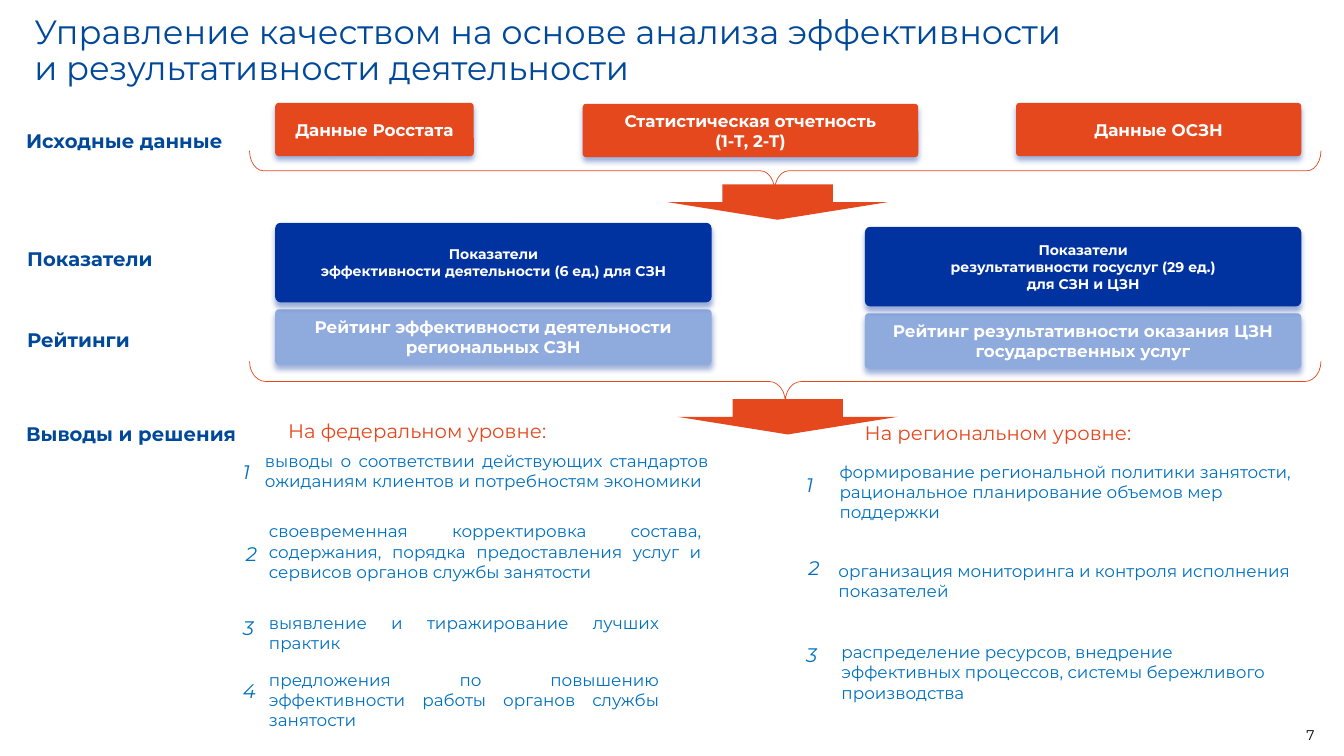
import pptx
import pptx.util
import pptx.dml.color
import pptx.enum.shapes
import pptx.enum.text
import pptx.oxml
import pptx.oxml.ns

COLOURS = {
    "title": "004899",
    "source": "E5481D",
    "indicator": "0033A0",
    "rating": "8FAADC",
    "conclusion": "0070C0",
    "white": "FFFFFF",
    "black": "000000",
}
FONT = "Montserrat"
COLUMNS, ROWS = 160, 90
SHAPES = pptx.enum.shapes.MSO_SHAPE
ALIGN = pptx.enum.text.PP_ALIGN
ANCHOR = pptx.enum.text.MSO_ANCHOR
LABEL_HEIGHT = 4.08


class QualitySlide:
    """Draws one slide on a grid of columns and rows in a single style."""

    def __init__(self, deck):
        self.deck = deck
        self.page = deck.slides.add_slide(deck.slide_layouts[5])

    def frame(self, left, top, width, height):
        column = self.deck.slide_width / COLUMNS
        row = self.deck.slide_height / ROWS
        return [round(value) for value in (left * column, top * row, width * column, height * row)]

    def colour(self, name):
        return pptx.dml.color.RGBColor.from_string(COLOURS[name])

    def fill_text(self, text_frame, text, size, colour, align=ALIGN.LEFT, bold=False, italic=False):
        text_frame.text = text
        for para in text_frame.paragraphs:
            para.alignment = align
            for span in para.runs:
                span.font.name = FONT
                span.font.size = pptx.util.Pt(size)
                span.font.bold = bold
                span.font.italic = italic
                span.font.color.rgb = self.colour(colour)

    def title(self, text, *place):
        box = self.page.shapes.title
        box.left, box.top, box.width, box.height = self.frame(*place)
        text_frame = box.text_frame
        text_frame.margin_left = text_frame.margin_right = 0
        text_frame.margin_top = text_frame.margin_bottom = 0
        text_frame.vertical_anchor = ANCHOR.MIDDLE
        text_frame.auto_size = pptx.enum.text.MSO_AUTO_SIZE.NONE
        self.fill_text(text_frame, text, 24, "title")
        text_frame.paragraphs[0].line_spacing = 0.9

    def text(self, text, place, size, colour, wrap=True, **style):
        box = self.page.shapes.add_textbox(*self.frame(*place))
        box.text_frame.word_wrap = wrap
        self.fill_text(box.text_frame, text, size, colour, **style)
        return box

    def label(self, text, left, top, width):
        self.text(text, (left, top, width, LABEL_HEIGHT), 14, "title", wrap=False, bold=True)

    def heading(self, text, left, top):
        self.text(text, (left, top, 46.56, LABEL_HEIGHT), 14, "source")

    def point(self, number, number_place, text, left, top, width, lines, align):
        self.text(str(number), (*number_place, 3.72, LABEL_HEIGHT), 14, "conclusion",
                  wrap=False, italic=True)
        self.text(text, (left, top, width, 0.96 + 2.52 * lines), 12, "conclusion", align=align)

    def page_number(self, text, *place):
        box = self.text(text, place, 10, "black", align=ALIGN.RIGHT)
        box.text_frame.vertical_anchor = ANCHOR.MIDDLE

    def shape(self, kind, place, fill):
        shape = self.page.shapes.add_shape(kind, *self.frame(*place))
        shape.shadow.inherit = False
        shape.fill.solid()
        shape.fill.fore_color.rgb = self.colour(fill)
        shape.line.fill.background()
        return shape

    def card(self, text, place, fill, size=12):
        card = self.shape(SHAPES.ROUNDED_RECTANGLE, place, fill)
        card.adjustments[0] = 0.07
        card.text_frame.word_wrap = True
        card.text_frame.vertical_anchor = ANCHOR.MIDDLE
        self.fill_text(card.text_frame, text, size, "white", align=ALIGN.CENTER, bold=True)
        effects = card._element.spPr.find(pptx.oxml.ns.qn("a:effectLst"))
        effects.append(pptx.oxml.parse_xml(
            f'<a:outerShdw {pptx.oxml.ns.nsdecls("a")} blurRad="{pptx.util.Pt(4)}" '
            f'dist="{pptx.util.Pt(3)}" dir="5400000" algn="t" rotWithShape="0">'
            f'<a:srgbClr val="{COLOURS["indicator"]}"><a:alpha val="40000"/></a:srgbClr>'
            '</a:outerShdw>'))

    def brace(self, top, curve, tip):
        left, top, length, depth = self.frame(29.7, top, 127.56, 4.8)
        brace = self.page.shapes.add_shape(
            SHAPES.RIGHT_BRACE, left + (length - depth) // 2, top - (length - depth) // 2,
            depth, length)
        brace.rotation = 90
        brace.adjustments[0], brace.adjustments[1] = curve, tip
        brace.shadow.inherit = False
        brace.fill.background()
        brace.line.color.rgb = self.colour("source")
        brace.line.width = pptx.util.Pt(0.5)

    def arrow(self, left, top):
        self.shape(SHAPES.DOWN_ARROW, (left, top, 26.28, 4.2), "source")


def main():
    deck = pptx.Presentation()
    deck.slide_width = pptx.util.Inches(13.33)
    deck.slide_height = pptx.util.Inches(7.5)
    slide = QualitySlide(deck)

    slide.title("Управление качеством на основе анализа эффективности "
                "и результативности деятельности", 4.08, 1.68, 123.12, 9)
    slide.page_number("7", 121.68, 85.08, 36, 4.8)

    for text, left, top, width in (
        ("Исходные данные", 1.92, 14.76, 26.04),
        ("Показатели", 2.04, 28.8, 27.12),
        ("Рейтинги", 2.04, 38.4, 14.76),
        ("Выводы и решения", 1.92, 49.68, 27.72),
    ):
        slide.label(text, left, top, width)

    for text, left, top, width in (
        ("Данные Росстата", 32.76, 12.24, 23.64),
        ("Статистическая отчетность\n(1-Т, 2-Т)", 69.36, 12.36, 39.96),
        ("Данные ОСЗН", 120.96, 12.24, 33.96),
    ):
        slide.card(text, (left, top, width, 6.36), "source")

    for left, top, indicator, rating in (
        (32.76, 26.52, "Показатели\nэффективности деятельности (6 ед.) для СЗН",
         "Рейтинг эффективности деятельности региональных СЗН"),
        (102.96, 27, "Показатели\nрезультативности госуслуг (29 ед.)\nдля СЗН и ЦЗН",
         "Рейтинг результативности оказания ЦЗН\nгосударственных услуг"),
    ):
        slide.card(rating, (left, top + 10.3, 51.96, 6.6), "rating")
        slide.card(indicator, (left, top, 51.96, 9.48), "indicator", size=10)

    slide.brace(17.94, 0.35, 0.51)
    slide.arrow(79.44, 21.96)
    slide.brace(43.02, 0.4, 0.5)
    slide.arrow(80.64, 47.52)

    slide.heading("На федеральном уровне:", 33.12, 49.32)
    slide.heading("На региональном уровне:", 101.76, 49.56)

    federal = (
        ((27.72, 54.12), "выводы о соответствии действующих стандартов ожиданиям клиентов "
         "и потребностям экономики", 30.36, 53.04, 55.2, 2),
        ((28.08, 63.96), "своевременная корректировка состава, содержания, порядка "
         "предоставления услуг и сервисов органов службы занятости", 30.84, 61.44, 53.88, 3),
        ((27.72, 72.72), "выявление и тиражирование лучших практик", 30.84, 72.36, 48.84, 2),
        ((27.72, 80.28), "предложения по повышению эффективности работы органов "
         "службы занятости", 30.84, 79.08, 48.84, 3),
    )
    regional = (
        ((94.8, 55.68), "формирование региональной политики занятости, рациональное "
         "планирование объемов мер поддержки", 98.76, 54.36, 56.4, 3),
        ((95.04, 65.64), "организация мониторинга и контроля исполнения показателей",
         98.64, 66.12, 59.4, 2),
        ((94.8, 75.96), "распределение ресурсов, внедрение эффективных процессов, "
         "системы бережливого производства", 99, 75.84, 54.6, 3),
    )
    for points, align in ((federal, ALIGN.JUSTIFY), (regional, ALIGN.LEFT)):
        for number, point in enumerate(points, 1):
            slide.point(number, *point, align)

    deck.save("out.pptx")


if __name__ == "__main__":
    main()
